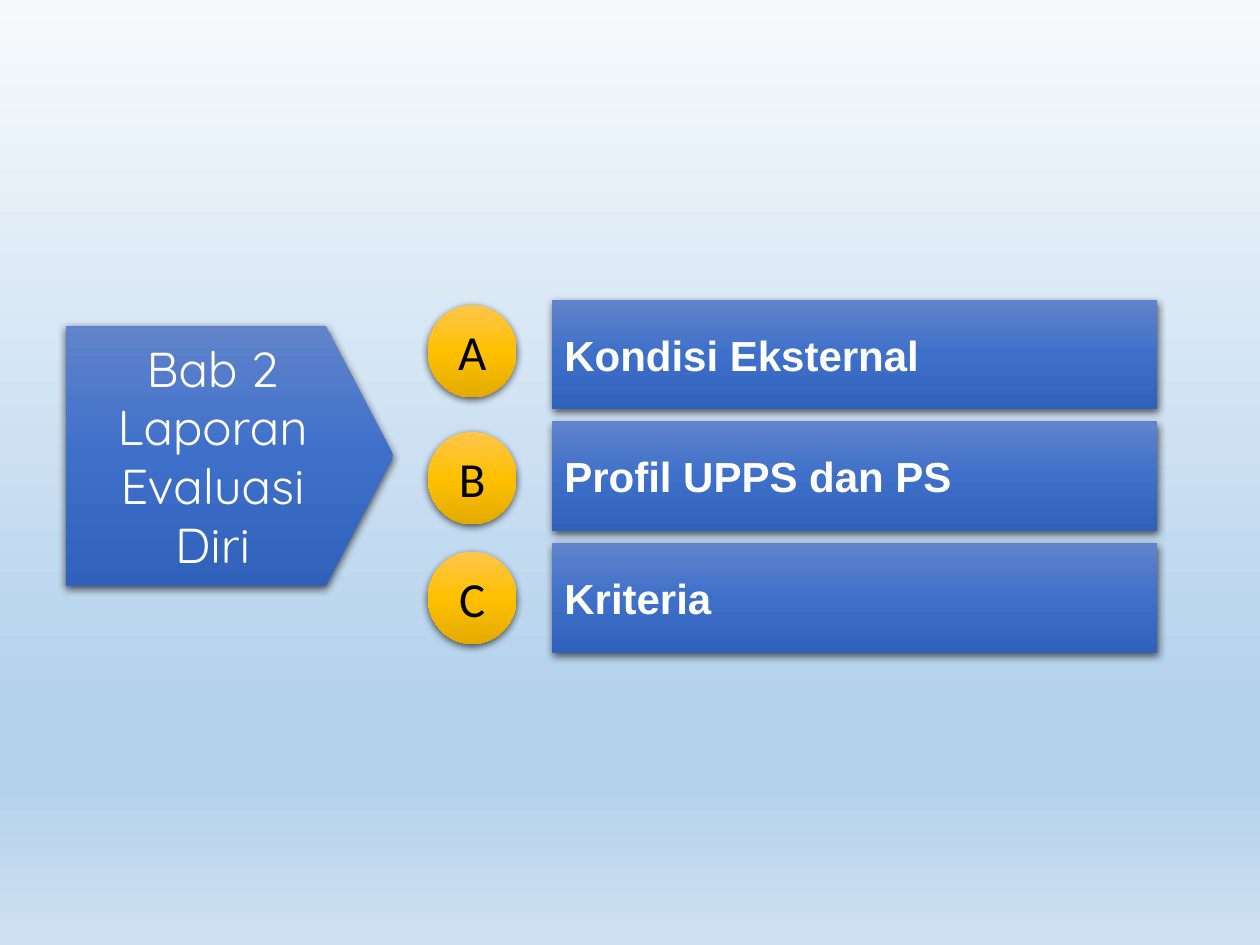
from lxml import etree
from pptx import Presentation
from pptx.dml.color import RGBColor
from pptx.enum.shapes import MSO_SHAPE
from pptx.enum.text import MSO_ANCHOR, PP_ALIGN
from pptx.oxml.ns import qn
from pptx.util import Pt

BAR, CIRCLE, ARROW = MSO_SHAPE.RECTANGLE, MSO_SHAPE.OVAL, MSO_SHAPE.PENTAGON
LEFT, CENTER = PP_ALIGN.LEFT, PP_ALIGN.CENTER
MIDDLE = MSO_ANCHOR.MIDDLE

COLORS = {"white": "FFFFFF", "black": "000000"}
GRADIENTS = {
    "sky": [(0, "F7FAFD"), (74, "B5D2EC"), (83, "B5D2EC"), (100, "CEE1F2")],
    "blue": [(0, "6183CB"), (50, "3E70CA"), (100, "3062BB")],
    "gold": [(0, "FFC64B"), (50, "FFC000"), (100, "E3AB00")],
}


def set_gradient(fill, element, name):
    """Fill with a top-to-bottom gradient of any number of stops."""
    fill.gradient()
    gradient = element.find(".//" + qn("a:gradFill"))
    gradient.clear()
    stops = etree.SubElement(gradient, qn("a:gsLst"))
    for position, color in GRADIENTS[name]:
        stop = etree.SubElement(stops, qn("a:gs"), pos=str(position * 1000))
        etree.SubElement(stop, qn("a:srgbClr"), val=color)
    etree.SubElement(gradient, qn("a:lin"), ang="5400000", scaled="0")


def add_block(kind, place, gradient, lines, align, font, size, color, bold=False):
    """Add a shaded shape with a soft shadow and one paragraph per line."""
    box = page.shapes.add_shape(kind, *[Pt(length) for length in place])
    set_gradient(box.fill, box.element, gradient)
    box.line.fill.background()
    box.shadow.inherit = False
    effects = box.element.spPr.find(qn("a:effectLst"))
    shadow = etree.SubElement(effects, qn("a:outerShdw"), blurRad=str(Pt(4.5)),
                              dist=str(Pt(1.5)), dir="5400000", algn="ctr", rotWithShape="0")
    tint = etree.SubElement(shadow, qn("a:srgbClr"), val=COLORS["black"])
    etree.SubElement(tint, qn("a:alpha"), val="63000")

    frame = box.text_frame
    frame.word_wrap = True
    frame.vertical_anchor = MIDDLE
    for index, line in enumerate(lines):
        para = frame.add_paragraph() if index else frame.paragraphs[0]
        para.alignment = align
        span = para.add_run()
        span.text = line
        span.font.name = font
        span.font.size = Pt(size)
        span.font.bold = bold
        span.font.color.rgb = RGBColor.from_string(COLORS[color])
    return box


deck = Presentation()
deck.slide_width, deck.slide_height = Pt(720), Pt(540)
page = deck.slides.add_slide(deck.slide_layouts[6])
set_gradient(page.background.fill, page.element, "sky")

# Sections: letter, top of its circle, heading
sections = [
    ("A", 174.3, "Kondisi Eksternal"),
    ("B", 246.8, "Profil UPPS dan PS"),
    ("C", 315.2, "Kriteria"),
]
for row, (letter, circle_top, heading) in enumerate(sections):
    bar_top = 171.2 + row * 69.6
    add_block(BAR, (315.4, bar_top, 346, 62.6), "blue", [heading],
              LEFT, "Arial", 24, "white", bold=True)
    add_block(CIRCLE, (244.5, circle_top, 50.7, 52.8), "gold", [letter],
              CENTER, "Calibri", 28, "black")

chapter = add_block(ARROW, (37.6, 186, 187.2, 148.8), "blue",
                    ["Bab 2", "Laporan Evaluasi Diri"], CENTER, "Quicksand", 28, "white")
chapter.adjustments[0] = 0.26

deck.save("out.pptx")
